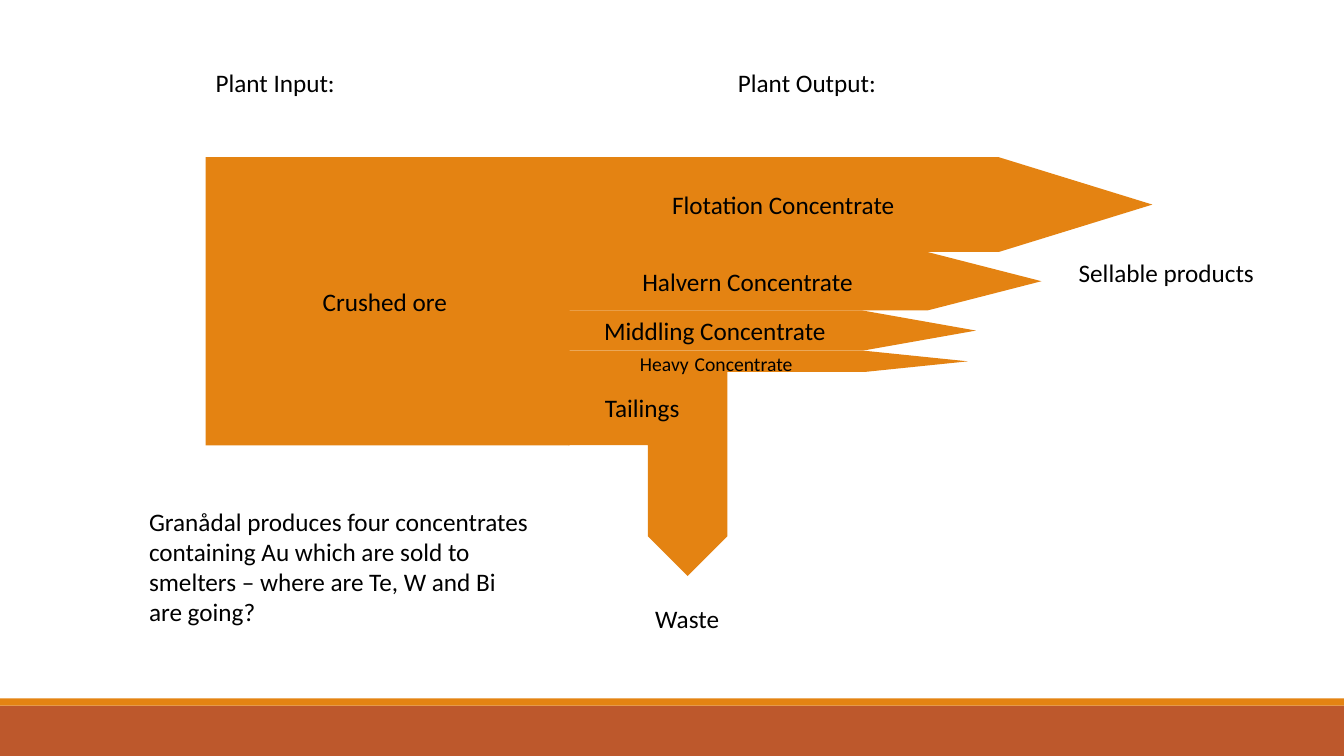
import pptx
import pptx.util
import pptx.dml.color
import pptx.enum.shapes
import pptx.enum.text
from dataclasses import dataclass

Inches = pptx.util.Inches
SHAPE = pptx.enum.shapes.MSO_SHAPE
ALIGN = pptx.enum.text.PP_ALIGN


@dataclass(frozen=True)
class Theme:
    flow: str = "E48312"
    footer: str = "BD582C"
    ink: str = "000000"
    font: str = "Calibri"
    body: int = 18
    small: int = 14


THEME = Theme()
SLIDE_W, SLIDE_H = 13.33, 7.5

# Content: runs are (text, size)
ORE = [("Crushed ore ", THEME.body)]
# Concentrates from top to bottom: runs, length, thickness, head length / thickness
CONCENTRATES = [
    ([("Flotation Concentrate", THEME.body)], 5.8, 0.94, 1.62),
    ([("Halvern Concentrate", THEME.body)], 4.7, 0.58, 1.95),
    ([("Middling Concentrate", THEME.body)], 4.05, 0.4, 2.82),
    ([("Heavy", THEME.small), (" ", THEME.body), ("Concentrate", THEME.small)],
     3.97, 0.21, 4.87),
]
# Labels: text, left, top, width, height
LABELS = [
    ("Tailings", 5.9, 3.84, 1.09, 0.4),
    ("Plant Input:", 2.04, 0.62, 1.48, 0.4),
    ("Plant Output:", 7.22, 0.62, 1.75, 0.4),
    ("Granådal produces four concentrates containing Au which are sold to "
     "smelters – where are Te, W and Bi are going?", 1.38, 4.97, 3.97, 1.31),
    ("Waste", 6.4, 5.94, 1.58, 0.4),
    ("Sellable products", 10.6, 2.5, 2.22, 0.4),
]

# Layout
ORE_LEFT, FLOW_TOP, ORE_W, ORE_H = 2.04, 1.56, 3.61, 2.86
SPLIT_X = 5.63
FOOTER_H, STRIPE_H = 0.5, 0.07
FOOTER_TOP = SLIDE_H - FOOTER_H


def write(frame, runs, align):
    frame.word_wrap = True
    paragraph = frame.paragraphs[0]
    paragraph.alignment = align
    for text, size in runs:
        run = paragraph.add_run()
        run.text = text
        run.font.name = THEME.font
        run.font.size = pptx.util.Pt(size)
        run.font.color.rgb = pptx.dml.color.RGBColor.from_string(THEME.ink)


def add_block(slide, kind, box, runs=(), color=THEME.flow, adjust=()):
    block = slide.shapes.add_shape(kind, *map(Inches, box))
    block.shadow.inherit = False
    block.fill.solid()
    block.fill.fore_color.rgb = pptx.dml.color.RGBColor.from_string(color)
    block.line.fill.background()
    for index, value in enumerate(adjust):
        block.adjustments[index] = value
    if runs:
        block.text_frame.vertical_anchor = pptx.enum.text.MSO_ANCHOR.MIDDLE
        write(block.text_frame, runs, ALIGN.CENTER)
    return block


def main():
    deck = pptx.Presentation()
    deck.slide_width, deck.slide_height = Inches(SLIDE_W), Inches(SLIDE_H)
    slide = deck.slides.add_slide(deck.slide_layouts.get_by_name("Blank"))

    # Footer band and stripe
    add_block(slide, SHAPE.RECTANGLE, (0, FOOTER_TOP, SLIDE_W, FOOTER_H),
              color=THEME.footer)
    add_block(slide, SHAPE.RECTANGLE,
              (0, FOOTER_TOP - STRIPE_H, SLIDE_W, STRIPE_H))

    # Plant input
    add_block(slide, SHAPE.RECTANGLE, (ORE_LEFT, FLOW_TOP, ORE_W, ORE_H), ORE)

    # Tailings turn down to waste
    tailings = add_block(slide, SHAPE.BENT_ARROW, (5.38, 3.88, 2.09, 1.58),
                         adjust=(0.5, 0.25, 0.25, 0))
    tailings.rotation = 90

    # Concentrates stacked without gaps
    top = FLOW_TOP
    for runs, length, thickness, head in CONCENTRATES:
        add_block(slide, SHAPE.RIGHT_ARROW, (SPLIT_X, top, length, thickness),
                  runs, adjust=(1, head))
        top += thickness

    # Labels
    for text, *box in LABELS:
        label = slide.shapes.add_textbox(*map(Inches, box))
        write(label.text_frame, [(text, THEME.body)], ALIGN.LEFT)
        label.text_frame.auto_size = pptx.enum.text.MSO_AUTO_SIZE.SHAPE_TO_FIT_TEXT

    deck.save("out.pptx")


if __name__ == "__main__":
    main()
